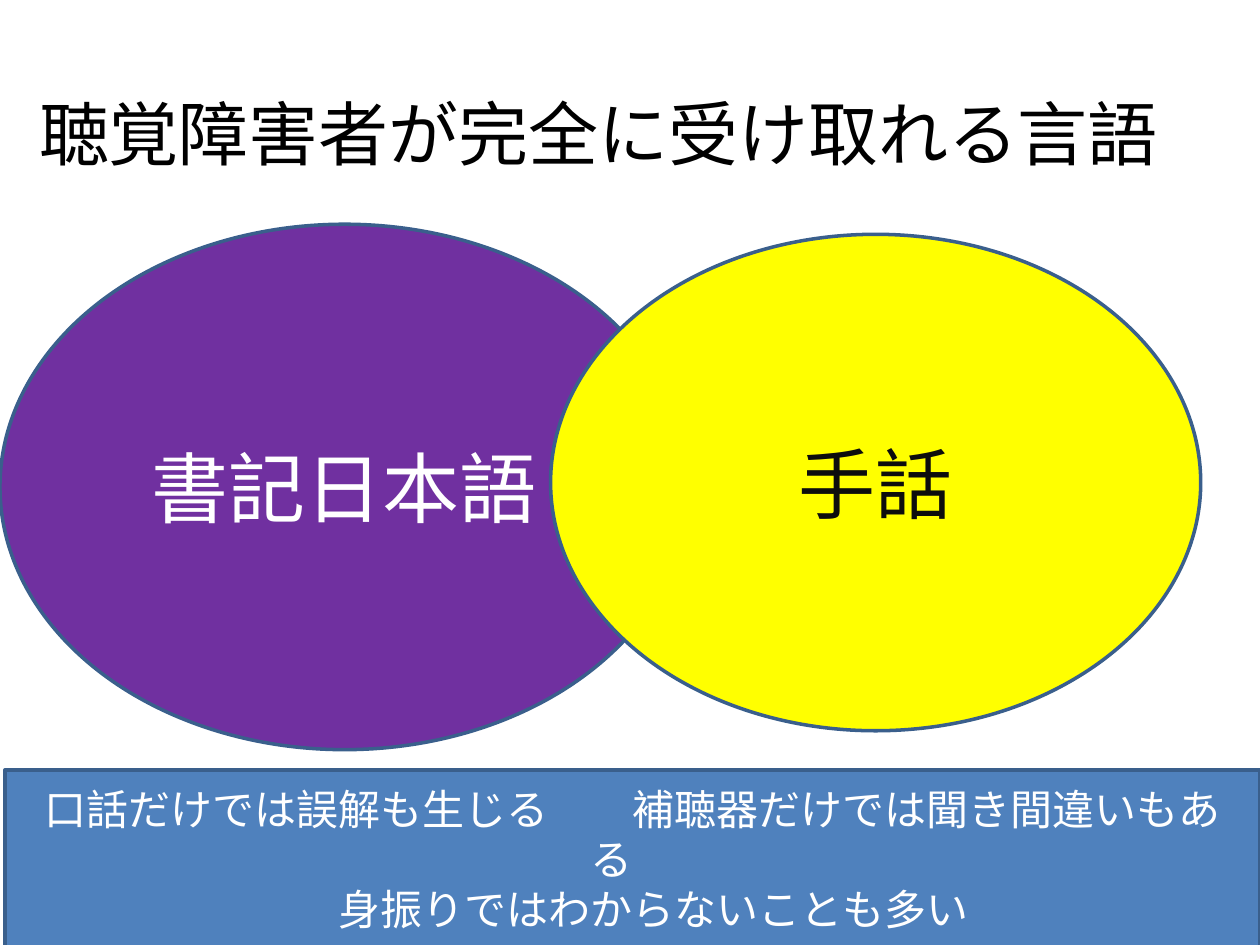
from dataclasses import dataclass

from lxml import etree
from pptx import Presentation
from pptx import util as u
from pptx.dml.color import RGBColor
from pptx.enum import shapes, text
from pptx.oxml import ns

BLACK = RGBColor(0x00, 0x00, 0x00)
NEAR_BLACK = RGBColor(0x0D, 0x0D, 0x0D)
WHITE = RGBColor(0xFF, 0xFF, 0xFF)
PURPLE = RGBColor(0x70, 0x30, 0xA0)
YELLOW = RGBColor(0xFF, 0xFF, 0x00)
BLUE = RGBColor(0x4F, 0x81, 0xBD)
OUTLINE = RGBColor(0x3A, 0x5F, 0x8C)
JAPANESE_FONT = "Noto Sans CJK JP"
LATIN_FONT = "Calibri"


@dataclass
class Label:
    wording: str
    size: int
    color: RGBColor
    font: str = JAPANESE_FONT


@dataclass
class Panel:
    kind: shapes.MSO_SHAPE
    left: float
    top: float
    width: float
    height: float
    fill: RGBColor
    label: Label


PANELS = [
    Panel(shapes.MSO_SHAPE.OVAL, 0, 1.78, 5.47, 4.17, PURPLE,
          Label("書記日本語", 44, WHITE)),
    Panel(shapes.MSO_SHAPE.OVAL, 4.37, 1.86, 5.16, 3.94, YELLOW,
          Label("手話", 44, NEAR_BLACK)),
    Panel(shapes.MSO_SHAPE.RECTANGLE, 0.04, 6.11, 9.96, 1.41, BLUE,
          Label("口話だけでは誤解も生じる　　補聴器だけでは聞き間違いもある　\n"
                "　身振りではわからないことも多い", 24, WHITE, LATIN_FONT)),
]


def write_label(box, label: Label) -> None:
    frame = box.text_frame
    frame.text = label.wording
    frame.word_wrap = True
    frame.vertical_anchor = text.MSO_ANCHOR.MIDDLE
    for para in frame.paragraphs:
        para.alignment = text.PP_ALIGN.CENTER
        for span in para.runs:
            span.font.size = u.Pt(label.size)
            span.font.color.rgb = label.color
            span.font.name = label.font
            latin = span.font._element.find(ns.qn("a:latin"))
            east_asian = etree.Element(ns.qn("a:ea"), typeface=JAPANESE_FONT)
            latin.addnext(east_asian)


def place_title(page, label: Label) -> None:
    title = page.shapes.title
    title.left, title.top = u.Inches(0), u.Inches(0.37)
    title.width, title.height = u.Inches(9.5), u.Inches(1.37)
    write_label(title, label)


def draw_panel(page, panel: Panel) -> None:
    box = page.shapes.add_shape(
        panel.kind, u.Inches(panel.left), u.Inches(panel.top),
        u.Inches(panel.width), u.Inches(panel.height))
    box.shadow.inherit = False
    box.fill.solid()
    box.fill.fore_color.rgb = panel.fill
    box.line.color.rgb = OUTLINE
    box.line.width = u.Pt(2)
    write_label(box, panel.label)


def main() -> None:
    deck = Presentation()
    deck.slide_width, deck.slide_height = u.Inches(10), u.Inches(7.5)
    page = deck.slides.add_slide(deck.slide_layouts.get_by_name("Title Only"))
    place_title(page, Label("聴覚障害者が完全に受け取れる言語", 40, BLACK))
    for panel in PANELS:
        draw_panel(page, panel)
    deck.save("out.pptx")


if __name__ == "__main__":
    main()
